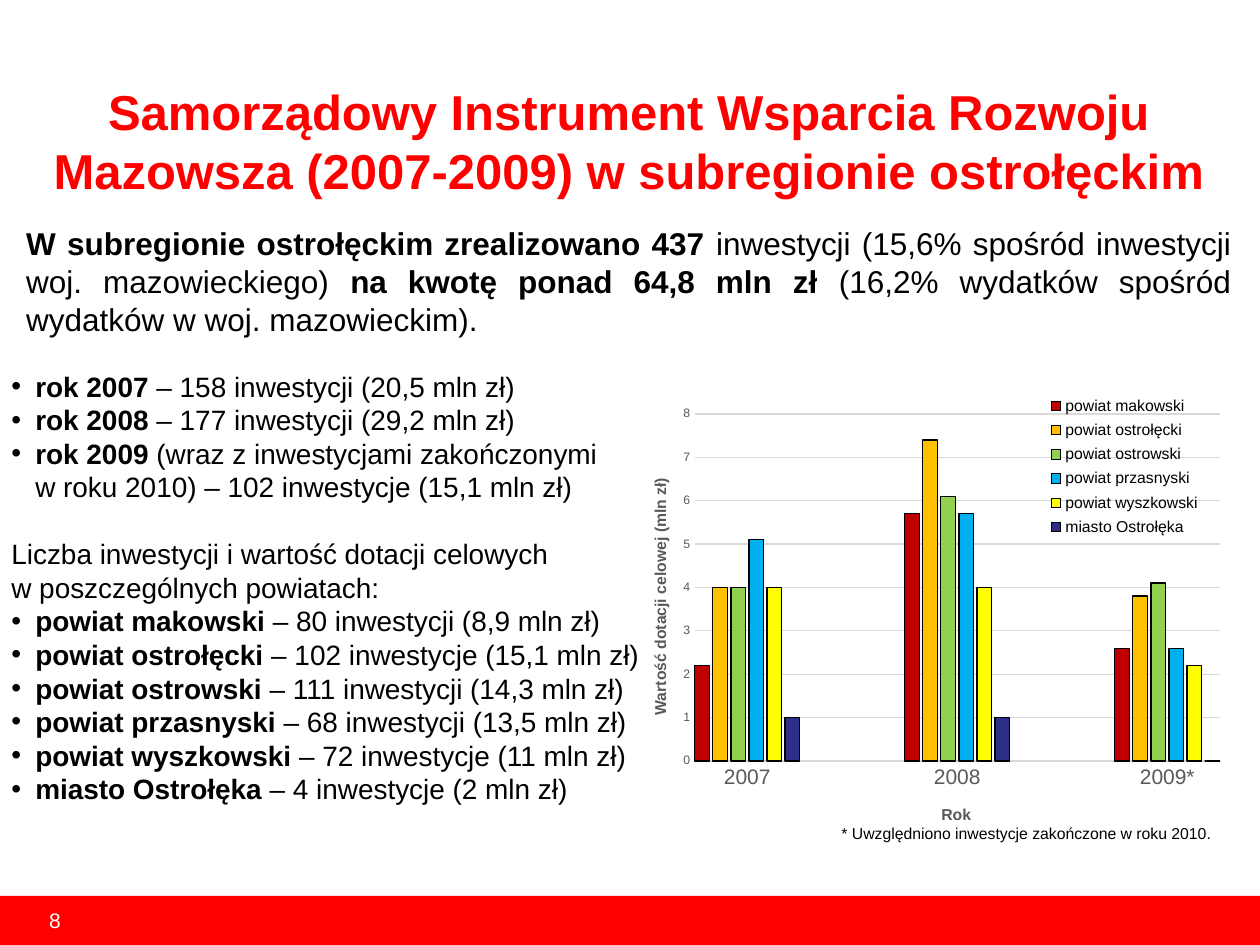
from lxml import etree
from pptx import Presentation
from pptx.chart.data import CategoryChartData
from pptx.dml.color import RGBColor
from pptx.enum.chart import XL_CHART_TYPE, XL_LEGEND_POSITION, XL_TICK_MARK
from pptx.enum.shapes import MSO_SHAPE
from pptx.enum.text import MSO_ANCHOR, MSO_AUTO_SIZE, PP_ALIGN
from pptx.oxml.ns import qn
from pptx.util import Inches, Pt

CLUSTERED = XL_CHART_TYPE.COLUMN_CLUSTERED
LEGEND_CORNER = XL_LEGEND_POSITION.CORNER
NO_TICK = XL_TICK_MARK.NONE
RECTANGLE = MSO_SHAPE.RECTANGLE
TOP, MIDDLE = MSO_ANCHOR.TOP, MSO_ANCHOR.MIDDLE
NO_AUTOFIT = MSO_AUTO_SIZE.NONE
LEFT, CENTER, JUSTIFY = PP_ALIGN.LEFT, PP_ALIGN.CENTER, PP_ALIGN.JUSTIFY

FONT = "Arial"
COLORS = {"red": "FF0000", "white": "FFFFFF", "black": "000000",
          "axis": "595959", "grid": "D9D9D9"}

YEARS = [
    ("rok 2007 ", "– 158 inwestycji (20,5 mln zł)"),
    ("rok 2008 ", "– 177 inwestycji (29,2 mln zł)"),
    ("rok 2009 ", "(wraz z inwestycjami zakończonymi \n"
                  "w roku 2010) – 102 inwestycje (15,1 mln zł)"),
]
COUNTIES_HEADING = "Liczba inwestycji i wartość dotacji celowych \nw poszczególnych powiatach:"
# name, summary, grants in 2007, 2008 and 2009, bar colour
COUNTIES = [
    ("powiat makowski", "– 80 inwestycji (8,9 mln zł)", (2.2, 5.7, 2.6), "C00000"),
    ("powiat ostrołęcki", "– 102 inwestycje (15,1 mln zł)", (4, 7.4, 3.8), "FFC000"),
    ("powiat ostrowski", "– 111 inwestycji (14,3 mln zł)", (4, 6.1, 4.1), "92D050"),
    ("powiat przasnyski", "– 68 inwestycji (13,5 mln zł)", (5.1, 5.7, 2.6), "00B0F0"),
    ("powiat wyszkowski", "– 72 inwestycje (11 mln zł)", (4, 4, 2.2), "FFFF00"),
    ("miasto Ostrołęka", "– 4 inwestycje (2 mln zł)", (1, 1, 0), "2D2D8A"),
]


def rgb(name):
    return RGBColor.from_string(COLORS.get(name, name))


def style_font(font, size, color, bold=False):
    font.name, font.size, font.bold = FONT, Pt(size), bold
    font.color.rgb = rgb(color)


def place(shape, left, top, width, height):
    shape.left, shape.top = Inches(left), Inches(top)
    shape.width, shape.height = Inches(width), Inches(height)


def add_text(paragraph, text, *, size, color="black", bold=False, align=None):
    """Append a run; each newline in the text becomes a line break."""
    if align is not None:
        paragraph.alignment = align
    for number, line in enumerate(text.split("\n")):
        if number:
            paragraph.add_line_break()
        run = paragraph.add_run()
        run.text = line
        style_font(run.font, size, color, bold)


def add_text_box(slide, left, top, width, height, wrap=True):
    box = slide.shapes.add_textbox(*map(Inches, (left, top, width, height)))
    box.text_frame.word_wrap = wrap
    return box.text_frame


def set_bullet(paragraph, bulleted):
    properties = paragraph._p.get_or_add_pPr()
    indent = Inches(0.19) if bulleted else 0
    properties.set("marL", str(indent))
    properties.set("indent", str(-indent))
    if bulleted:
        etree.SubElement(properties, qn("a:buChar")).set("char", "•")
    else:
        etree.SubElement(properties, qn("a:buNone"))


def add_title(slide):
    title = slide.shapes.title
    place(title, 0.11, 0.6, 9.76, 1.04)
    frame = title.text_frame
    frame.auto_size, frame.vertical_anchor = NO_AUTOFIT, TOP
    add_text(frame.paragraphs[0],
             "Samorządowy Instrument Wsparcia Rozwoju "
             "Mazowsza (2007-2009) w subregionie ostrołęckim",
             size=28, color="red", bold=True, align=CENTER)


def add_introduction(slide):
    paragraph = add_text_box(slide, 0.11, 1.73, 9.76, 1.46).paragraphs[0]
    for text, bold in [
        ("W subregionie ostrołęckim zrealizowano 437 ", True),
        ("inwestycji (15,6% spośród inwestycji woj. mazowieckiego) ", False),
        ("na kwotę ponad 64,8 mln zł ", True),
        ("(16,2% wydatków spośród wydatków w woj. mazowieckim).", False),
    ]:
        add_text(paragraph, text, size=18, bold=bold, align=JUSTIFY)


def add_list(slide):
    body = slide.placeholders[1]
    place(body, -0.01, 2.88, 5.24, 3.6)
    frame = body.text_frame
    frame.auto_size = NO_AUTOFIT
    counties = [(f"{name} ", summary) for name, summary, *_ in COUNTIES]
    for number, (label, text) in enumerate([*YEARS, ("", COUNTIES_HEADING), *counties]):
        paragraph = frame.add_paragraph() if number else frame.paragraphs[0]
        set_bullet(paragraph, bool(label))
        paragraph.space_before = Pt(0 if label else 19)
        if label:
            add_text(paragraph, label, size=16, bold=True)
        add_text(paragraph, text, size=16, align=LEFT)


def set_layout(element, x, y, width=None, height=None, inner=False):
    """Fix a chart part at fractions of the chart's size."""
    for old in element.findall(qn("c:layout")):
        element.remove(old)
    layout = etree.Element(qn("c:layout"))
    manual = etree.SubElement(layout, qn("c:manualLayout"))
    settings = [("layoutTarget", "inner")] if inner else []
    settings += [("xMode", "edge"), ("yMode", "edge"), ("x", x), ("y", y)]
    if width:
        settings += [("w", width), ("h", height)]
    for tag, value in settings:
        etree.SubElement(manual, qn(f"c:{tag}")).set("val", str(value))
    overlay = element.find(qn("c:overlay"))
    if overlay is None:
        element.insert(0, layout)
    else:
        overlay.addprevious(layout)


def format_axis(axis, title, size, x, y):
    add_text(axis.axis_title.text_frame.paragraphs[0], title,
             size=9, color="axis", bold=True)
    set_layout(axis.axis_title._element, x, y)
    axis.major_tick_mark = axis.minor_tick_mark = NO_TICK
    style_font(axis.tick_labels.font, size, "axis")


def format_line(line, color):
    line.color.rgb, line.width = rgb(color), Pt(0.75)


def add_grant_chart(slide):
    data = CategoryChartData(number_format="0.0")
    data.categories = ["2007", "", "2008", "", "2009*"]
    for name, _, (first, second, third), _ in COUNTIES:
        data.add_series(name, [first, None, second, None, third])
    frame = slide.shapes.add_chart(
        CLUSTERED, *map(Inches, (4.84, 3.03, 4.92, 3.55)), data)
    chart = frame.chart
    style_font(chart.font, 10, "black")
    chart.has_title = False

    plot = chart.plots[0]
    plot.gap_width, plot.overlap, plot.vary_by_categories = 0, -23, False
    for series, (*_, color) in zip(plot.series, COUNTIES):
        series.format.fill.solid()
        series.format.fill.fore_color.rgb = rgb(color)
        format_line(series.format.line, "black")
    set_layout(chart._chartSpace.chart.plotArea, 0.137, 0.072, 0.847, 0.778, inner=True)

    years, values = chart.category_axis, chart.value_axis
    format_axis(years, "Rok", 12, 0.53, 0.94)
    format_line(years.format.line, "grid")
    format_axis(values, "Wartość dotacji celowej (mln zł)", 7, 0.06, 0.21)
    values.minimum_scale, values.maximum_scale, values.major_unit = 0, 8, 1
    values.tick_labels.number_format = "0"
    values.tick_labels.number_format_is_linked = False
    values.format.line.fill.background()
    format_line(values.major_gridlines.format.line, "grid")

    chart.has_legend = True
    chart.legend.position = LEGEND_CORNER
    chart.legend.include_in_layout = True
    style_font(chart.legend.font, 9, "black")
    set_layout(chart.legend._element, 0.7, 0.02, 0.26, 0.34)


def add_footer(slide):
    bar = slide.shapes.add_shape(RECTANGLE, *map(Inches, (0, 7.11, 10, 0.39)))
    bar.shadow.inherit = False
    bar.fill.solid()
    bar.fill.fore_color.rgb = rgb("red")
    bar.line.fill.background()
    number = add_text_box(slide, 0.39, 7.11, 0.47, 0.39)
    number.vertical_anchor = MIDDLE
    number.margin_left = number.margin_right = 0
    number.margin_top = number.margin_bottom = 0
    add_text(number.paragraphs[0], "8", size=12, color="white")


def main():
    presentation = Presentation()
    presentation.slide_width, presentation.slide_height = Inches(10), Inches(7.5)
    slide = presentation.slides.add_slide(presentation.slide_layouts[1])
    add_footer(slide)
    add_title(slide)
    add_introduction(slide)
    add_grant_chart(slide)
    footnote = add_text_box(slide, 6.58, 6.49, 3.16, 0.25, wrap=False)
    add_text(footnote.paragraphs[0],
             "* Uwzględniono inwestycje zakończone w roku 2010.", size=9)
    add_list(slide)
    presentation.save("out.pptx")


if __name__ == "__main__":
    main()
